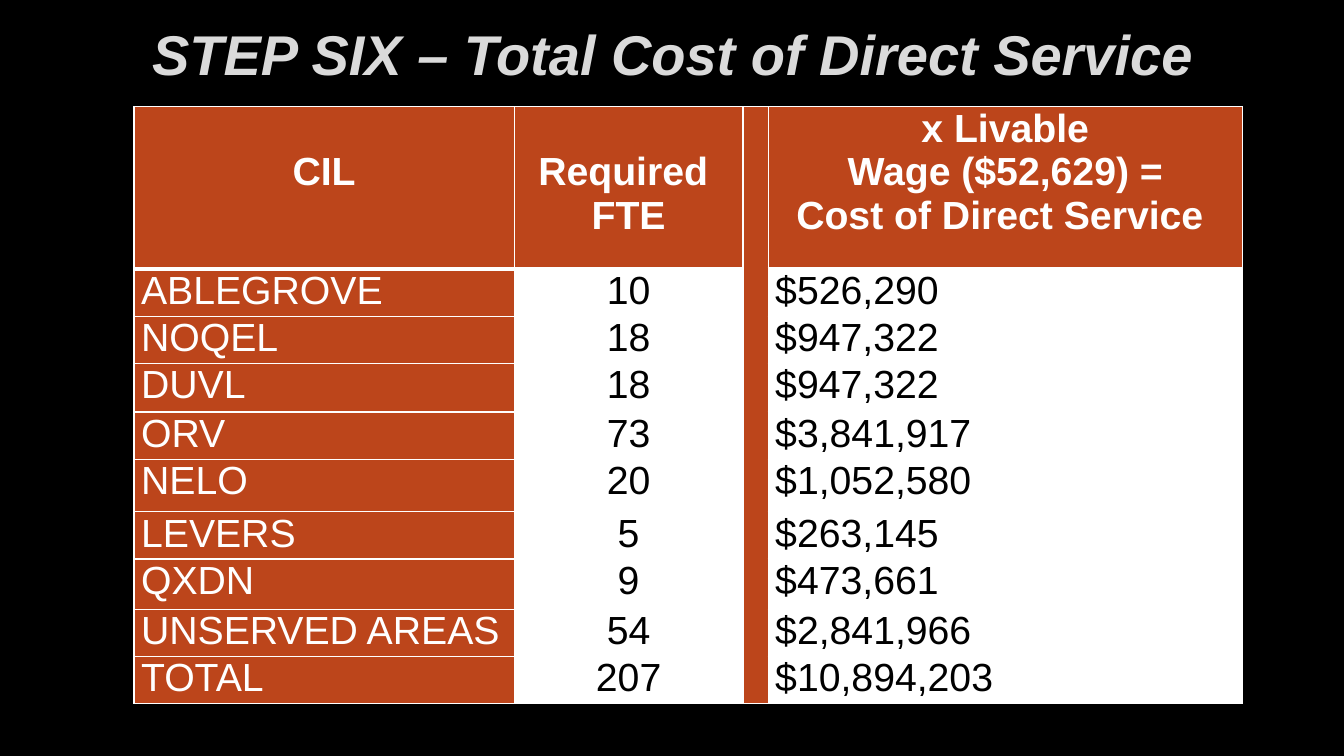
from dataclasses import dataclass

from lxml.etree import SubElement
from pptx import Presentation
from pptx.dml.color import RGBColor
from pptx.enum.text import MSO_ANCHOR, PP_ALIGN
from pptx.oxml.ns import qn
from pptx.util import Pt

PX = 9144


@dataclass(frozen=True)
class Theme:
    font: str = "Arial"
    background: str = "000000"
    title: str = "DADADA"
    title_outline: str = "404040"
    accent: str = "BC451B"
    light: str = "FFFFFF"
    dark: str = "000000"
    title_size: int = 40
    table_size: int = 28
    thin: float = 1
    thick: float = 3


THEME = Theme()
COLUMN_WIDTHS = [377, 227, 25, 470]
ROW_HEIGHTS = [161, 47, 43, 48, 47, 52, 47, 50, 43, 43]
BAR_COLUMN = 2
HEADER_LINE = 43
HEADERS = [
    (0, HEADER_LINE, ["CIL"]),
    (1, HEADER_LINE, ["Required ", "FTE"]),
    (3, 0, ["x Livable", "Wage ($52,629) =", "Cost of Direct Service "]),
]
CENTERS = [
    ("ABLEGROVE", "10", "$526,290"),
    ("NOQEL", "18", "$947,322"),
    ("DUVL", "18", "$947,322"),
    ("ORV", "73", "$3,841,917"),
    ("NELO", "20", "$1,052,580"),
    ("LEVERS", "5", "$263,145"),
    ("QXDN", "9", "$473,661"),
    ("UNSERVED AREAS", "54", "$2,841,966"),
    ("TOTAL", "207", "$10,894,203"),
]
BODY_STYLES = [
    (0, THEME.accent, THEME.light, PP_ALIGN.LEFT),
    (1, THEME.light, THEME.dark, PP_ALIGN.CENTER),
    (3, THEME.light, THEME.dark, PP_ALIGN.LEFT),
]


def scaled(box):
    return [length * PX for length in box]


def add_span(para, text, size, color, bold=False, italic=False):
    span = para.add_run()
    span.text = text
    font = span.font
    font.name = THEME.font
    font.size = Pt(size)
    font.bold = bold
    font.italic = italic
    font.color.rgb = RGBColor.from_string(color)
    return span


def add_solid_line(parent, tag, width, color):
    line = SubElement(parent, qn(tag), w=str(Pt(width)))
    fill = SubElement(line, qn("a:solidFill"))
    return line, SubElement(fill, qn("a:srgbClr"), val=color)


def write_lines(cell, lines, color, align, bold):
    frame = cell.text_frame
    for index, text in enumerate(lines):
        para = frame.add_paragraph() if index else frame.paragraphs[0]
        para.alignment = align
        add_span(para, text, THEME.table_size, color, bold)


def style_cell(cell, fill, row):
    properties = cell._tc.get_or_add_tcPr()
    top = THEME.thick if row == 1 else THEME.thin
    bottom = THEME.thick if row == 0 else THEME.thin
    edges = {"a:lnL": THEME.thin, "a:lnR": THEME.thin, "a:lnT": top, "a:lnB": bottom}
    for tag, width in edges.items():
        add_solid_line(properties, tag, width, THEME.light)
    cell.fill.solid()
    cell.fill.fore_color.rgb = RGBColor.from_string(fill)


def add_title(page, box):
    frame = page.shapes.add_textbox(*scaled(box)).text_frame
    frame.word_wrap = True
    frame.vertical_anchor = MSO_ANCHOR.MIDDLE
    para = frame.paragraphs[0]
    para.alignment = PP_ALIGN.CENTER
    span = add_span(para, "STEP SIX – Total Cost of Direct Service",
                    THEME.title_size, THEME.title, True, True)
    properties = span.font._element
    outline, color = add_solid_line(properties, "a:ln", 0.75, THEME.title_outline)
    SubElement(color, qn("a:alpha"), val="10000")
    properties.insert(0, outline)


def add_cost_table(page, box):
    shape = page.shapes.add_table(len(ROW_HEIGHTS), len(COLUMN_WIDTHS), *scaled(box))
    table = shape.table
    table.horz_banding = False
    for column, width in zip(table.columns, COLUMN_WIDTHS):
        column.width = width * PX
    for row, height in zip(table.rows, ROW_HEIGHTS):
        row.height = height * PX
    for cell in table.iter_cells():
        cell.margin_left = cell.margin_right = 7 * PX
        cell.margin_top = cell.margin_bottom = 0
        cell.text_frame.paragraphs[0].font.size = Pt(THEME.table_size)

    for column, top, lines in HEADERS:
        cell = table.cell(0, column)
        style_cell(cell, THEME.accent, 0)
        cell.margin_top = top * PX
        write_lines(cell, lines, THEME.light, PP_ALIGN.CENTER, True)

    for row, values in enumerate(CENTERS, start=1):
        for value, (column, fill, color, align) in zip(values, BODY_STYLES):
            cell = table.cell(row, column)
            style_cell(cell, fill, row)
            write_lines(cell, [value], color, align, False)

    bar = table.cell(0, BAR_COLUMN)
    bar.merge(table.cell(len(CENTERS), BAR_COLUMN))
    bar.fill.solid()
    bar.fill.fore_color.rgb = RGBColor.from_string(THEME.accent)


def main():
    deck = Presentation()
    deck.slide_width, deck.slide_height = scaled((1333, 750))
    page = deck.slides.add_slide(deck.slide_layouts[6])
    page.background.fill.solid()
    page.background.fill.fore_color.rgb = RGBColor.from_string(THEME.background)
    add_title(page, (101, 0, 1132, 106))
    add_cost_table(page, (133, 106, sum(COLUMN_WIDTHS), sum(ROW_HEIGHTS)))
    deck.save("out.pptx")


if __name__ == "__main__":
    main()
